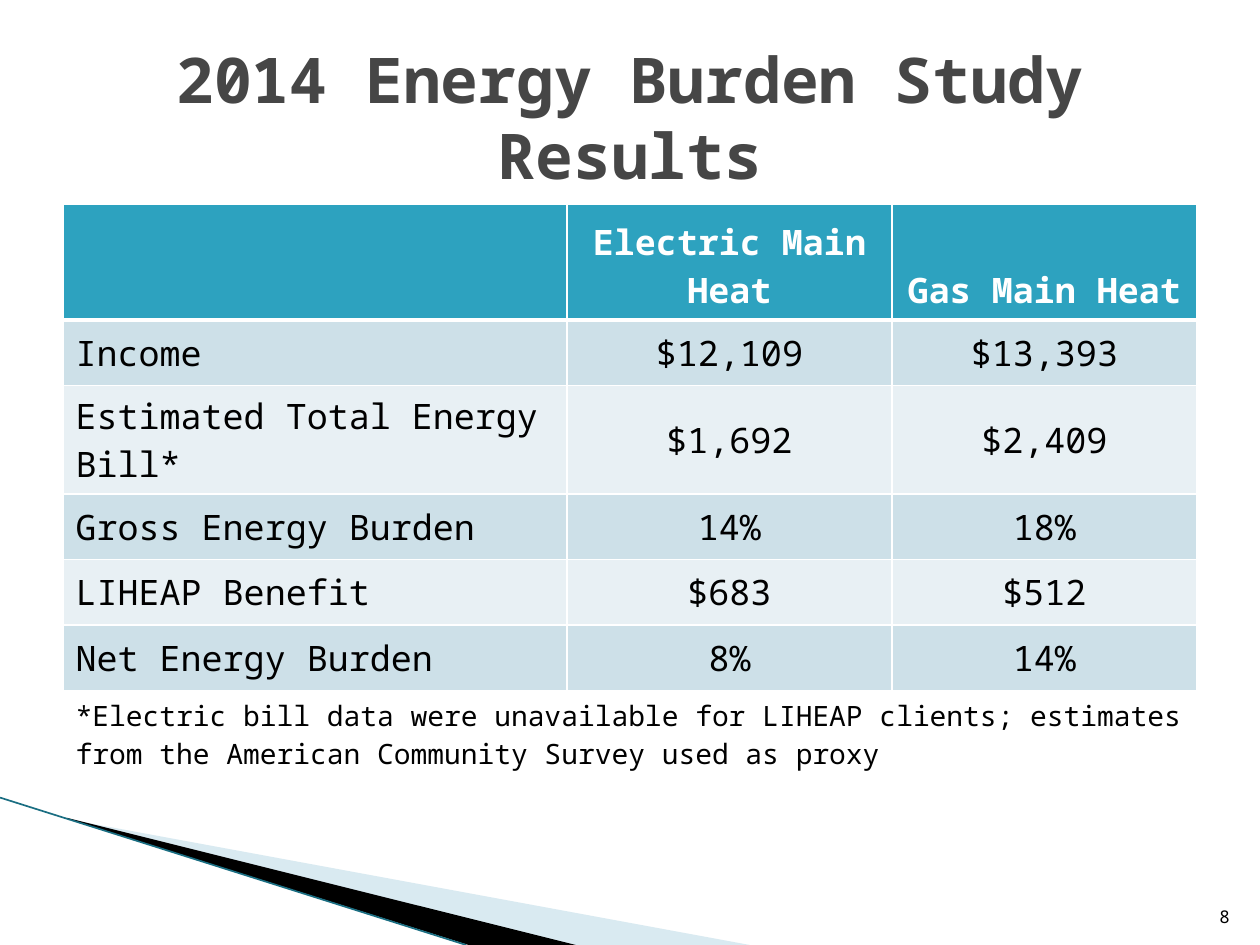
from lxml import etree
from pptx import Presentation
from pptx.dml.color import RGBColor
from pptx.enum.shapes import MSO_CONNECTOR
from pptx.enum.text import MSO_ANCHOR, PP_ALIGN
from pptx.oxml.ns import qn
from pptx.util import Inches, Pt

LEFT, CENTER, RIGHT = PP_ALIGN.LEFT, PP_ALIGN.CENTER, PP_ALIGN.RIGHT
TOP, MIDDLE, BOTTOM = MSO_ANCHOR.TOP, MSO_ANCHOR.MIDDLE, MSO_ANCHOR.BOTTOM
STRAIGHT = MSO_CONNECTOR.STRAIGHT

WHITE = RGBColor(0xFF, 0xFF, 0xFF)
BLACK = RGBColor(0x00, 0x00, 0x00)
CHARCOAL = RGBColor(0x46, 0x46, 0x46)
HEADER_TEAL = RGBColor(0x2D, 0xA2, 0xBF)
BAND_DARK = RGBColor(0xCD, 0xE0, 0xE8)
BAND_LIGHT = RGBColor(0xE8, 0xF0, 0xF4)
SWOOSH_BLUE = RGBColor(0xA0, 0xCB, 0xDC)
EDGE_TEAL = RGBColor(0x1A, 0x6E, 0x82)

HEADINGS = ("", "Electric Main Heat", "Gas Main Heat")
RESULTS = (
    ("Income", "$12,109", "$13,393"),
    ("Estimated Total Energy Bill*", "$1,692", "$2,409"),
    ("Gross Energy Burden", "14%", "18%"),
    ("LIHEAP Benefit", "$683", "$512"),
    ("Net Energy Burden", "8%", "14%"),
)
FOOTNOTE = ("*Electric bill data were unavailable for LIHEAP clients; "
            "estimates from the American Community Survey used as proxy")


def write(frame, text, size=20, color=BLACK, bold=False, align=LEFT):
    frame.word_wrap = True
    paragraph = frame.paragraphs[0]
    paragraph.text = text
    paragraph.alignment = align
    font = paragraph.font
    font.name = "Noto Sans Mono"
    font.size = Pt(size)
    font.bold = bold
    font.color.rgb = color


class SlideBuilder:
    COLUMNS, ROWS = 20, 15

    def __init__(self, deck):
        self.slide = deck.slides.add_slide(deck.slide_layouts[6])
        self.column = deck.slide_width / self.COLUMNS
        self.row = deck.slide_height / self.ROWS

    def x(self, columns):
        return round(columns * self.column)

    def y(self, rows):
        return round(rows * self.row)

    def text(self, left, top, width, height, words, anchor=MIDDLE, **style):
        box = self.slide.shapes.add_textbox(
            self.x(left), self.y(top), self.x(width), self.y(height))
        box.text_frame.vertical_anchor = anchor
        write(box.text_frame, words, **style)

    def wedge(self, corners, color, opacity=100):
        points = [(self.x(across), self.y(down)) for across, down in corners]
        outline = self.slide.shapes.build_freeform(*points[0])
        outline.add_line_segments(points[1:], close=True)
        wedge = outline.convert_to_shape()
        wedge.shadow.inherit = False
        wedge.line.fill.background()
        wedge.fill.solid()
        wedge.fill.fore_color.rgb = color
        if opacity < 100:
            tint = wedge.fill._xPr.find(qn("a:solidFill"))[0]
            etree.SubElement(tint, qn("a:alpha"), val=str(opacity * 1000))

    def line(self, start, end, color, weight):
        edge = self.slide.shapes.add_connector(
            STRAIGHT, self.x(start[0]), self.y(start[1]), self.x(end[0]), self.y(end[1]))
        edge.line.color.rgb = color
        edge.line.width = Pt(weight)
        etree.SubElement(edge._element.spPr, qn("a:effectLst"))

    def table(self, left, top, widths, heights):
        frame = self.slide.shapes.add_table(
            len(heights), len(widths), self.x(left), self.y(top),
            self.x(sum(widths)), self.y(sum(heights)))
        for column, width in zip(frame.table.columns, widths):
            column.width = self.x(width)
        for row, height in zip(frame.table.rows, heights):
            row.height = self.y(height)
        return frame.table

    def cell(self, cell, words, fill=None, anchor=MIDDLE, top=1, bottom=1, **style):
        write(cell.text_frame, words, **style)
        cell.vertical_anchor = anchor
        properties = cell._tc.get_or_add_tcPr()
        for side, weight in (("L", 1), ("R", 1), ("T", top), ("B", bottom)):
            border = etree.SubElement(properties, qn(f"a:ln{side}"), w=str(Pt(weight)))
            paint = etree.SubElement(border, qn("a:solidFill"))
            etree.SubElement(paint, qn("a:srgbClr"), val=str(WHITE))
        if fill is None:
            cell.fill.background()
        else:
            cell.fill.solid()
            cell.fill.fore_color.rgb = fill


def main():
    deck = Presentation()
    deck.slide_width, deck.slide_height = Inches(10), Inches(7.5)
    page = SlideBuilder(deck)

    page.wedge([(1.1, 13.01), (11.9, 15), (9.12, 15), (1.1, 13)], SWOOSH_BLUE, 40)
    page.wedge([(1.06, 12.98), (9.14, 15), (7.44, 15), (1.08, 13)], BLACK)
    page.line((0, 12.66), (7.4, 15), EDGE_TEAL, 0.95)

    results = page.table(1, 3.24, (8, 5.16, 4.84), (1.84, *[1.04] * len(RESULTS), 1.52))
    for column, heading in enumerate(HEADINGS):
        page.cell(results.cell(0, column), heading, HEADER_TEAL, BOTTOM, bottom=3,
                  color=WHITE, bold=True, align=CENTER)
    for row, values in enumerate(RESULTS, 1):
        for column, value in enumerate(values):
            page.cell(results.cell(row, column), value,
                      BAND_DARK if row % 2 else BAND_LIGHT,
                      top=3 if row == 1 else 1,
                      align=CENTER if column else LEFT)
    last = len(RESULTS) + 1
    footnote = results.cell(last, 0)
    footnote.merge(results.cell(last, len(HEADINGS) - 1))
    page.cell(footnote, FOOTNOTE, anchor=TOP, size=16)

    page.text(1, 0.6, 18, 2.5, "2014 Energy Burden Study Results",
              size=36, color=CHARCOAL, bold=True, align=CENTER)
    page.text(18.92, 14.02, 0.8, 0.8, "8", anchor=BOTTOM, size=10, align=RIGHT)
    deck.save("out.pptx")


if __name__ == "__main__":
    main()
